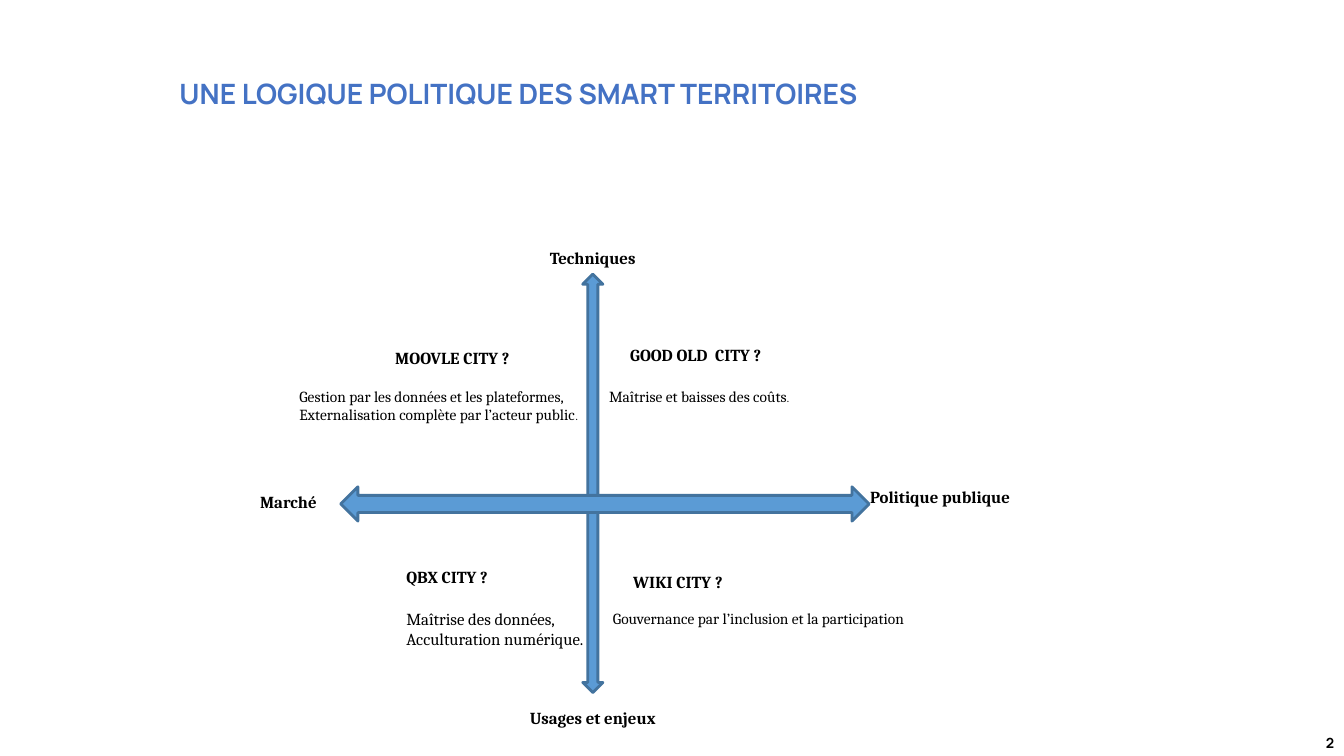
from pptx import Presentation
from pptx.dml.color import RGBColor
from pptx.enum.shapes import MSO_SHAPE
from pptx.enum.text import MSO_ANCHOR, MSO_AUTO_SIZE, PP_ALIGN
from pptx.util import Inches, Pt

VERTICAL_ARROW = MSO_SHAPE.UP_DOWN_ARROW
HORIZONTAL_ARROW = MSO_SHAPE.LEFT_RIGHT_ARROW
LEFT, CENTER, RIGHT = PP_ALIGN.LEFT, PP_ALIGN.CENTER, PP_ALIGN.RIGHT
MIDDLE, BOTTOM = MSO_ANCHOR.MIDDLE, MSO_ANCHOR.BOTTOM
NO_AUTOFIT = MSO_AUTO_SIZE.NONE

COLORS = {"text": "000000", "title": "4472C4", "arrow": "5B9BD5", "outline": "43739E"}
SERIF = "Cambria"
SANS = "Manrope"
HEADING_WIDTH, HEADING_HEIGHT = 1.45, 0.3

AXIS_LABELS = [
    ("Techniques", (5.38, 2.46, 1, 0.22), CENTER),
    ("Usages et enjeux", (5.18, 7.02, 1.4, 0.21), CENTER),
    ("Marché", (2.58, 4.88, 0.7, 0.29), LEFT),
    ("Politique publique", (8.63, 4.83, 1.55, 0.38), LEFT),
]

QUADRANTS = [
    ("MOOVLE CITY ?", 0.95,
     ["Gestion par les données et les plateformes,",
      "Externalisation complète par l’acteur public."],
     (2.97, 3.45, 3.5, 1.47), 0.39, 11, True),
    ("GOOD OLD  CITY ?", 0.21, ["Maîtrise et baisses des coûts."],
     (6.04, 3.42, 2.21, 0.87), 0.42, 11, True),
    ("QBX CITY ?", 0, ["Maîtrise des données,", "Acculturation numérique."],
     (4.03, 5.62, 1.9, 0.85), 0.42, 12, False),
    ("WIKI CITY ?", 0.2, ["Gouvernance par l’inclusion et la participation"],
     (6.08, 5.67, 3.1, 0.79), 0.37, 11, False),
]


def inches(box):
    return [Inches(length) for length in box]


def style_run(run, size, font=SERIF, color="text", bold=False):
    run.font.name = font
    run.font.size = Pt(size)
    run.font.bold = bold
    run.font.color.rgb = RGBColor.from_string(COLORS[color])


def clear_margins(frame):
    frame.margin_left = frame.margin_right = 0
    frame.margin_top = frame.margin_bottom = 0


def add_label(page, box, lines, size, bold=False, align=LEFT, font=SERIF):
    frame = page.shapes.add_textbox(*inches(box)).text_frame
    frame.word_wrap = True
    frame.text = "\n".join(lines)
    clear_margins(frame)
    for para in frame.paragraphs:
        para.alignment = align
        style_run(para.runs[0], size, font, bold=bold)
    return frame


def add_title(page, box, text):
    title = page.shapes.title
    title.left, title.top, title.width, title.height = inches(box)
    frame = title.text_frame
    frame.text = text
    frame.word_wrap = True
    frame.auto_size = NO_AUTOFIT
    frame.vertical_anchor = MIDDLE
    clear_margins(frame)
    para = frame.paragraphs[0]
    para.alignment = LEFT
    style_run(para.runs[0], 20, SANS, "title", True)


def add_arrow(page, box, kind):
    arrow = page.shapes.add_shape(kind, *inches(box))
    arrow.shadow.inherit = False
    arrow.fill.solid()
    arrow.fill.fore_color.rgb = RGBColor.from_string(COLORS["arrow"])
    arrow.line.color.rgb = RGBColor.from_string(COLORS["outline"])
    arrow.line.width = Pt(2)


def add_axes(page):
    add_arrow(page, (5.78, 2.72, 0.2, 4.15), VERTICAL_ARROW)
    add_arrow(page, (3.38, 4.83, 5.24, 0.34), HORIZONTAL_ARROW)
    for text, box, align in AXIS_LABELS:
        add_label(page, box, [text], 12, True, align)


def add_quadrant(page, box, heading, indent, lines, gap, size, small_stop):
    left, top, width, height = box
    heading_box = (left + indent, top, HEADING_WIDTH, HEADING_HEIGHT)
    add_label(page, heading_box, [heading], 12, True)
    frame = add_label(page, (left, top + gap, width, height - gap), lines, size)
    if small_stop:
        para = frame.paragraphs[-1]
        para.runs[0].text = lines[-1][:-1]
        stop = para.add_run()
        stop.text = lines[-1][-1]
        style_run(stop, 8)


def add_page_number(page, box, number):
    frame = add_label(page, box, [number], 10, True, RIGHT, SANS)
    frame.vertical_anchor = BOTTOM
    frame.margin_left = frame.margin_right = Inches(0.1)
    frame.margin_top = frame.margin_bottom = Inches(0.05)


def main():
    deck = Presentation()
    deck.slide_width, deck.slide_height = Inches(13.33), Inches(7.5)
    page = deck.slides.add_slide(deck.slide_layouts[5])
    add_title(page, (1.78, 0.61, 11.5, 0.64), "UNE LOGIQUE POLITIQUE DES SMART TERRITOIRES")
    add_axes(page)
    for heading, indent, lines, box, gap, size, small_stop in QUADRANTS:
        add_quadrant(page, box, heading, indent, lines, gap, size, small_stop)
    add_page_number(page, (10.33, 7.1, 3, 0.4), "2")
    deck.save("out.pptx")


if __name__ == "__main__":
    main()
